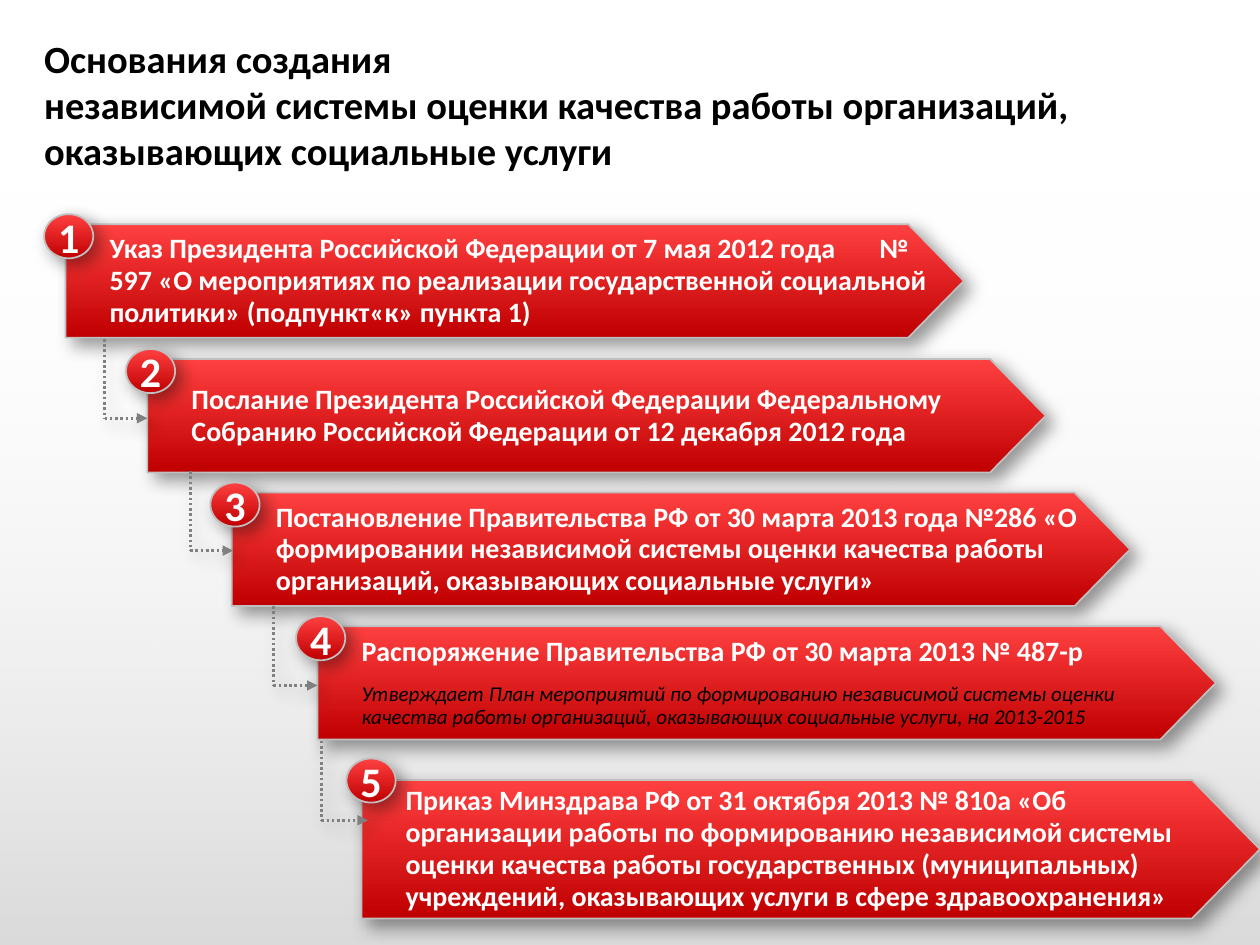
from lxml.etree import fromstring
from pptx import Presentation
from pptx.dml.color import RGBColor
from pptx.enum.dml import MSO_LINE
from pptx.enum.shapes import MSO_CONNECTOR, MSO_SHAPE
from pptx.enum.text import MSO_ANCHOR, PP_ALIGN
from pptx.util import Inches, Pt

TITLE = [
    "Основания создания",
    "независимой системы оценки качества работы организаций, ",
    "оказывающих социальные услуги",
]

# Arrow left, top, height; badge shift to the left and up; main text, note
STEPS = [
    (0.52, 1.78, 0.9, 0.17, 0.08,
     "Указ Президента Российской Федерации от 7 мая 2012 года\t№ 597 "
     "«О мероприятиях по реализации государственной социальной политики» "
     "(подпункт«к» пункта 1)", ""),
    (1.17, 2.85, 0.9, 0.17, 0.08,
     "Послание Президента Российской Федерации Федеральному Собранию "
     "Российской Федерации от 12 декабря 2012 года", ""),
    (1.84, 3.91, 0.9, 0.17, 0.08,
     "Постановление Правительства РФ от 30 марта 2013 года №286 "
     "«О формировании независимой системы оценки качества работы "
     "организаций, оказывающих социальные услуги»", ""),
    (2.52, 4.97, 0.9, 0.17, 0.08,
     "Распоряжение Правительства РФ от 30 марта 2013 № 487-р",
     "Утверждает План мероприятий по формированию независимой системы "
     "оценки качества работы организаций, оказывающих социальные услуги, "
     "на 2013-2015"),
    (2.87, 6.19, 1.1, 0.12, 0.17,
     "Приказ Минздрава РФ от 31 октября 2013 № 810а «Об организации работы "
     "по формированию независимой системы оценки качества работы "
     "государственных (муниципальных) учреждений, оказывающих услуги "
     "в сфере здравоохранения»", ""),
]

# Elbow links: left, top, tip
LINKS = [(0.83, 2.69, 1.17), (1.51, 3.74, 1.85),
         (2.17, 4.81, 2.52), (2.55, 5.88, 2.92)]
DROP = 0.63
WIDE = 7.13
BADGE = (0.39, 0.35)
RED = [("FF4040", 100), ("C00000", 100)]
HAZE = [("000000", 15), ("FFFFFF", 0)]
NS = 'xmlns:a="http://schemas.openxmlformats.org/drawingml/2006/main"'


def color(code):
    return RGBColor.from_string(code)


def tint(code, alpha):
    return f'<a:srgbClr val="{code}"><a:alpha val="{alpha * 1000}"/></a:srgbClr>'


def shade(shape, stops, angle):
    marks = "".join(f'<a:gs pos="{i * 100000}">{tint(*stop)}</a:gs>'
                    for i, stop in enumerate(stops))
    fill = fromstring(f'<a:gradFill {NS} rotWithShape="1"><a:gsLst>{marks}</a:gsLst>'
                      f'<a:lin ang="{angle * 60000}" scaled="0"/></a:gradFill>')
    shape._element.spPr.find("{*}prstGeom").addnext(fill)


def shadow(shape):
    shape._element.spPr.append(fromstring(
        f'<a:effectLst {NS}><a:outerShdw blurRad="{Pt(10)}" dist="{Pt(5)}" '
        f'dir="{45 * 60000}" algn="tl" rotWithShape="0">{tint("000000", 40)}'
        '</a:outerShdw></a:effectLst>'))


def write(para, text, size=16, ink="FFFFFF", bold=True, italic=False,
          align=PP_ALIGN.LEFT, space=None, after=None):
    para.alignment = align
    para.line_spacing = space
    if after is not None:
        para.space_after = Pt(after)
    for i, line in enumerate(text.split("\n")):
        if i:
            para.add_line_break()
        run = para.add_run()
        run.text = line
        font = run.font
        font.name, font.size = "Calibri", Pt(size)
        font.bold, font.italic = bold, italic
        font.color.rgb = color(ink)


def frame(shape, left=0):
    box = shape.text_frame
    box.word_wrap = True
    box.vertical_anchor = MSO_ANCHOR.MIDDLE
    box.margin_left = Inches(left)
    box.margin_top = box.margin_right = box.margin_bottom = 0
    return box


def block(kind, *spot):
    shape = slide.shapes.add_shape(kind, *map(Inches, spot))
    shade(shape, RED, 90)
    shape.line.color.rgb = color("C0C0C0")
    shape.line.width = Pt(1)
    shadow(shape)
    return shape


def dots(*ends, head=False):
    link = slide.shapes.add_connector(MSO_CONNECTOR.STRAIGHT, *map(Inches, ends))
    link.line.color.rgb = color("808080")
    link.line.width = Pt(1.5)
    link.line.dash_style = MSO_LINE.ROUND_DOT
    if head:
        link.line._get_or_add_ln().append(
            fromstring(f'<a:tailEnd {NS} type="triangle"/>'))
    shadow(link)


deck = Presentation()
deck.slide_width, deck.slide_height = Inches(10), Inches(7.5)
slide = deck.slides.add_slide(deck.slide_layouts[6])

# Grey haze over the lower part
haze = slide.shapes.add_shape(MSO_SHAPE.RECTANGLE, *map(Inches, (0, 1.31, 10, 6.19)))
haze.line.fill.background()
haze.shadow.inherit = False
shade(haze, HAZE, 270)

# Title
title = slide.shapes.add_textbox(*map(Inches, (0.35, 0.26, 9.29, 1.13)))
write(frame(title).paragraphs[0], "\n".join(TITLE), size=22, ink="000000")

# Arrows with numbered badges
for num, (left, top, high, back, up, text, note) in enumerate(STEPS, 1):
    arrow = block(MSO_SHAPE.PENTAGON, left, top, WIDE, high)
    arrow.adjustments[0] = 0.49
    box = frame(arrow, left=0.35)
    para = box.paragraphs[0]
    write(para, text, space=0.95, after=8)
    if "\t" in text:
        para._p.get_or_add_pPr().append(fromstring(
            f'<a:tabLst {NS}><a:tab pos="{Inches(6.11)}" algn="l"/></a:tabLst>'))
    if note:
        write(box.add_paragraph(), note, size=12, ink="000000", bold=False,
              italic=True, space=0.95, after=8)
    badge = block(MSO_SHAPE.OVAL, left - back, top - up, *BADGE)
    write(frame(badge).paragraphs[0], str(num), size=24, align=PP_ALIGN.CENTER)

# Dotted links from each arrow to the next
for left, top, tip in LINKS:
    dots(left, top, left, top + DROP)
    dots(left, top + DROP, tip, top + DROP, head=True)

deck.save("out.pptx")
